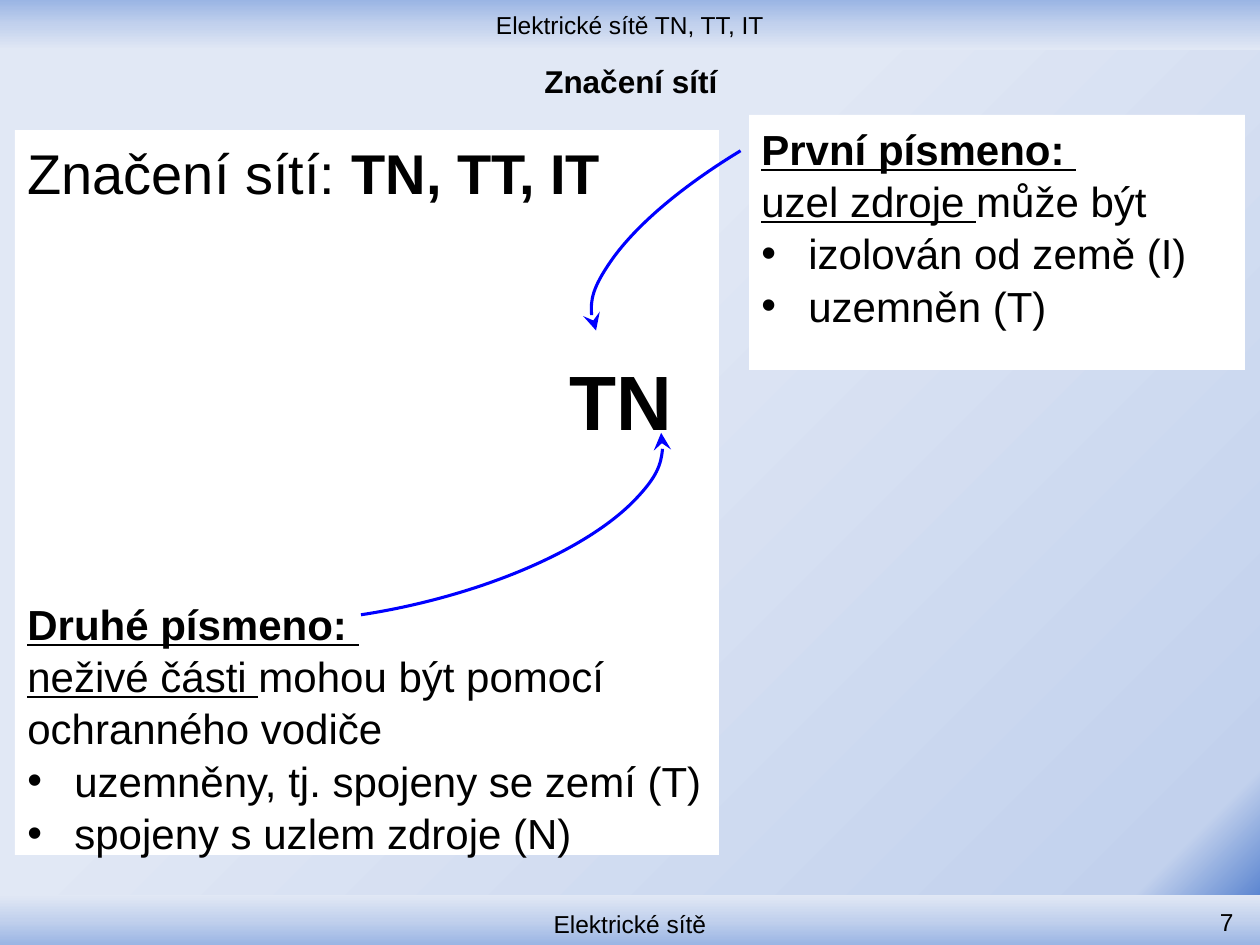
from dataclasses import dataclass

from lxml.etree import SubElement
from pptx import Presentation
from pptx.dml.color import RGBColor
from pptx.enum.shapes import MSO_SHAPE
from pptx.enum.text import MSO_ANCHOR, PP_ALIGN
from pptx.oxml import parse_xml
from pptx.oxml.ns import nsdecls, qn
from pptx.util import Pt

PX = 914400 // 126


@dataclass(frozen=True)
class Theme:
    font: str = "Arial"
    text: str = "000000"
    panel: str = "FFFFFF"
    arrow: str = "0000FF"
    band: tuple = ((0, "9AB5E4"), (50, "C2D1ED"), (100, "E1E8F5"))
    backdrop: tuple = ((0, "3468C5"), (8, "C2D1ED"), (60, "E1E8F5"))
    small: int = 14
    title: int = 18
    body: int = 24
    heading: int = 32
    symbol: int = 44
    line: float = 1.75
    spacing: float = 1.04


T = Theme()


def emu(box):
    return [v * PX for v in box]


def gradient(stops, direction):
    """Return a gradFill element; direction is its lin or path XML."""
    gs = "".join(f'<a:gs pos="{pos * 1000}"><a:srgbClr val="{color}"/></a:gs>'
                 for pos, color in stops)
    return parse_xml(f'<a:gradFill {nsdecls("a")} rotWithShape="1">'
                     f"<a:gsLst>{gs}</a:gsLst>{direction}</a:gradFill>")


def add_run(p, text, size, bold=False, underline=False):
    r = p.add_run()
    r.text = text
    f = r.font
    f.name, f.size, f.bold, f.underline = T.font, Pt(size), bold, underline
    f.color.rgb = RGBColor.from_string(T.text)


def backdrop(s):
    fill = s.background.fill
    fill.solid()
    bg_pr = s._element.cSld.find(qn("p:bg")).find(qn("p:bgPr"))
    path = '<a:path path="circle"><a:fillToRect l="100000" t="100000"/></a:path>'
    bg_pr.replace(bg_pr[0], gradient(T.backdrop, path))


def add_box(s, box):
    sp = s.shapes.add_shape(MSO_SHAPE.RECTANGLE, *emu(box))
    sp.shadow.inherit = False
    sp.line.fill.background()
    return sp


def label(sp, text, size, anchor, align=PP_ALIGN.CENTER, bold=False):
    """Put a single line of text in a shape."""
    tf = sp.text_frame
    tf.word_wrap = True
    tf.vertical_anchor = anchor
    p = tf.paragraphs[0]
    p.alignment = align
    add_run(p, text, size, bold)


def band(s, box, text, angle, anchor):
    sp = add_box(s, box)
    sp.fill.solid()
    sp_pr = sp._element.spPr
    sp_pr.replace(sp_pr.find(qn("a:solidFill")),
                  gradient(T.band, f'<a:lin ang="{angle * 60000}" scaled="0"/>'))
    label(sp, text, T.small, anchor)


def footer(s, box, text, number):
    x, y, w, h = box
    band(s, box, text, 270, MSO_ANCHOR.BOTTOM)
    tb = s.shapes.add_textbox(*emu((x + w - 84, y - 2, 70, h)))
    label(tb, number, T.small, MSO_ANCHOR.BOTTOM, PP_ALIGN.RIGHT)


def title(s, box, text):
    label(s.shapes.add_textbox(*emu(box)), text, T.title,
          MSO_ANCHOR.MIDDLE, bold=True)


def panel(s, box):
    """Add a white panel and return its text frame."""
    sp = add_box(s, box)
    sp.fill.solid()
    sp.fill.fore_color.rgb = RGBColor.from_string(T.panel)
    tf = sp.text_frame
    tf.word_wrap = True
    tf.vertical_anchor = MSO_ANCHOR.TOP
    return tf


def paragraph(tf, first=False, before=0, align=PP_ALIGN.LEFT, indent=0):
    p = tf.paragraphs[0] if first else tf.add_paragraph()
    p.alignment = align
    p.line_spacing = T.spacing
    p.space_before = Pt(before)
    if indent:
        p._p.get_or_add_pPr().set("marL", str(indent * PX))
    return p


def letter_note(tf, heading, subject, rest, bullets, first=False, before=0):
    """Write what one letter of the network name stands for."""
    add_run(paragraph(tf, first, before), heading, T.body, True, True)
    p = paragraph(tf)
    add_run(p, subject, T.body, underline=True)
    add_run(p, rest, T.body)
    for text in bullets:
        p = paragraph(tf, indent=47)
        p_pr = p._p.get_or_add_pPr()
        p_pr.set("indent", str(-47 * PX))
        SubElement(p_pr, qn("a:buFont"), typeface=T.font)
        SubElement(p_pr, qn("a:buChar"), char="•")
        add_run(p, text, T.body)


def network_panel(s, box):
    tf = panel(s, box)
    p = paragraph(tf, first=True)
    add_run(p, "Značení sítí: ", T.heading)
    add_run(p, "TN, TT, IT", T.heading, bold=True)
    p = paragraph(tf, before=82, align=PP_ALIGN.CENTER, indent=508)
    add_run(p, "TN", T.symbol, bold=True)
    letter_note(tf, "Druhé písmeno: ", "neživé části ",
                "mohou být pomocí ochranného vodiče",
                ["uzemněny, tj. spojeny se zemí (T)",
                 "spojeny s uzlem zdroje (N)"], before=86)


def first_letter_panel(s, box):
    letter_note(panel(s, box), "První písmeno: ", "uzel zdroje ", "může být",
                ["izolován od země (I)", "uzemněn (T)"], first=True)


def curved_arrow(s, box, rotation, start):
    sp = s.shapes.add_shape(MSO_SHAPE.ARC, *emu(box))
    sp.shadow.inherit = False
    sp.adjustments[0], sp.adjustments[1] = start, 0.27
    sp.rotation = rotation
    sp._element.spPr.find(qn("a:xfrm")).set("flipH", "1")
    sp.fill.background()
    sp.line.color.rgb = RGBColor.from_string(T.arrow)
    sp.line.width = Pt(T.line)
    SubElement(sp.line._get_or_add_ln(), qn("a:tailEnd"),
               type="stealth", w="lg", len="lg")


def main():
    prs = Presentation()
    prs.slide_width, prs.slide_height = emu((1260, 945))
    s = prs.slides.add_slide(prs.slide_layouts[6])
    backdrop(s)
    band(s, (0, 0, 1260, 50), "Elektrické sítě TN, TT, IT", 90, MSO_ANCHOR.MIDDLE)
    footer(s, (0, 895, 1260, 50), "Elektrické sítě", "7")
    title(s, (64, 56, 1134, 50), "Značení sítí")
    network_panel(s, (15, 130, 704, 725))
    curved_arrow(s, (86, 380, 582, 230), 168.1, 150.3)
    first_letter_panel(s, (749, 115, 496, 255))
    curved_arrow(s, (568, 93, 619, 218), 335.9, 189.23)
    prs.save("out.pptx")


if __name__ == "__main__":
    main()
